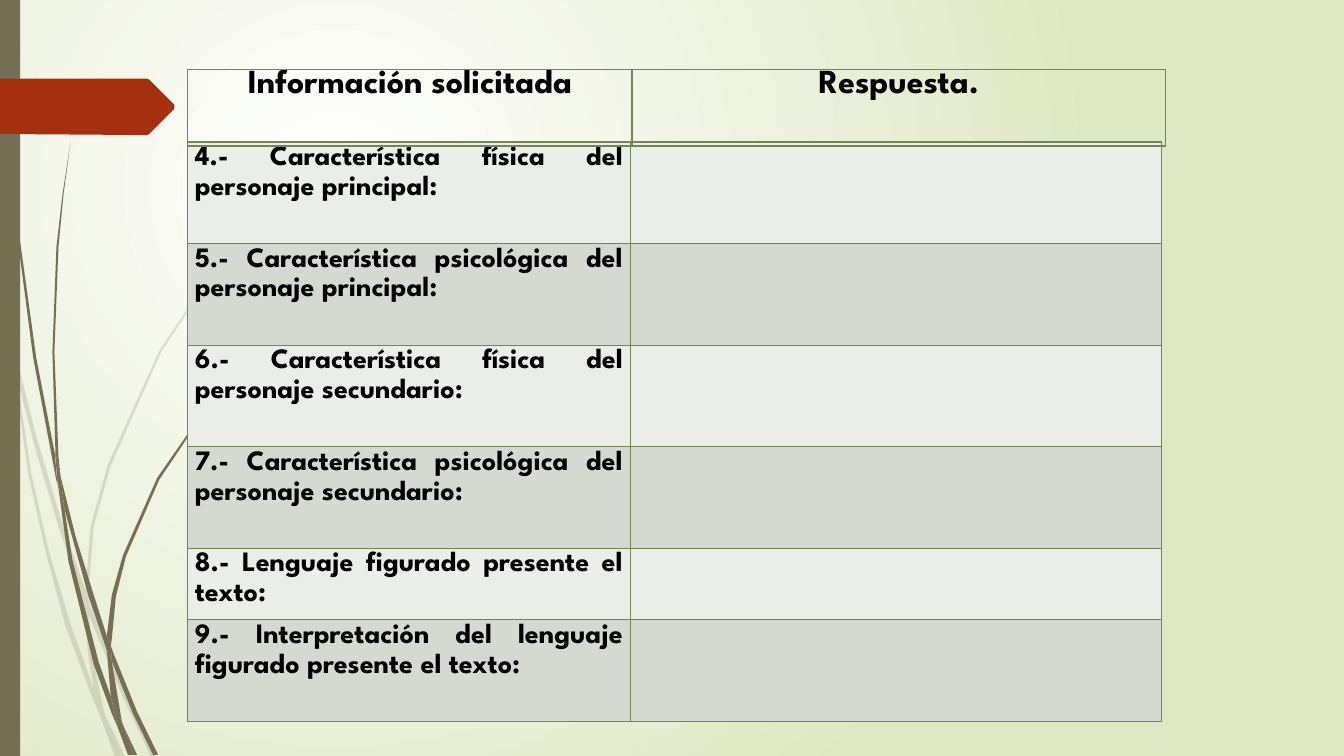
from dataclasses import dataclass

from lxml import etree
from pptx import Presentation
from pptx.dml.color import RGBColor
from pptx.enum.shapes import MSO_SHAPE
from pptx.enum.text import PP_ALIGN
from pptx.oxml.ns import qn
from pptx.util import Cm, Pt

RECT = MSO_SHAPE.RECTANGLE
CENTER, JUSTIFY = PP_ALIGN.CENTER, PP_ALIGN.JUSTIFY


@dataclass(frozen=True)
class Theme:
    font: str = "League Spartan"
    header_size: int = 24
    body_size: int = 20
    text: str = "000000"
    border: str = "728653"
    stem: str = "766F54"
    arrow: str = "A53010"
    bands: tuple = ("EBEDE9", "D5D9D1")
    glow: tuple = ("FFFFFF", "DFE8C4")


T = Theme()

# Outlines as (x, y) corners, in hundredths of an inch
UNIT = Cm(2.54) / 100
FAINT_STEMS = [
    [(11, 350), (9, 322), (0, 282), (0, 299), (10, 344)],
    [(58, 522), (84, 599), (85, 586), (62, 520), (36, 433), (14, 345), (17, 376), (36, 449)],
    [(92, 607), (88, 596), (88, 610), (123, 694), (150, 751), (155, 751), (127, 692)],
    [(119, 751), (124, 751), (105, 711)],
    [(93, 683), (70, 619), (48, 545), (31, 469), (17, 376), (11, 350), (28, 470),
     (45, 546), (65, 621), (92, 693), (101, 714), (99, 707)],
    [(84, 599), (87, 646), (93, 683), (96, 692), (105, 711), (103, 706), (91, 646),
     (88, 610), (88, 608)],
    [(88, 584), (93, 522), (110, 462), (160, 349), (229, 245), (268, 198), (290, 175),
     (312, 154), (312, 153), (289, 175), (268, 197), (228, 244), (158, 348), (107, 461),
     (90, 522), (85, 584), (85, 586), (88, 596)],
    [(101, 714), (114, 751), (119, 751)],
    [(88, 608), (88, 610), (88, 596), (85, 586), (84, 599)],
    [(96, 692), (93, 683), (99, 707), (101, 714), (119, 751), (105, 711)],
]
DARK_STEMS = [
    [(7, 110), (17, 233), (33, 355), (56, 477), (57, 481), (55, 457), (55, 453), (36, 355),
     (19, 232), (8, 109), (5, 48), (4, 0), (3, 0), (4, 48)],
    [(88, 592), (106, 645), (106, 633), (106, 631), (93, 590), (75, 532), (60, 472), (64, 505)],
    [(113, 649), (110, 641), (111, 656), (132, 708), (152, 749), (157, 749), (136, 706)],
    [(110, 691), (98, 657), (72, 556), (64, 505), (57, 477), (68, 557), (93, 659),
     (111, 708), (117, 722), (116, 717)],
    [(60, 472), (58, 453), (54, 349), (58, 245), (63, 193), (70, 141), (62, 193),
     (56, 245), (52, 349), (55, 449)],
    [(133, 749), (136, 749), (122, 719)],
    [(57, 477), (64, 505), (60, 472), (55, 449), (55, 453)],
    [(111, 633), (115, 592), (125, 552), (158, 476), (205, 406), (231, 374), (245, 359),
     (261, 344), (260, 344), (245, 358), (231, 373), (204, 405), (156, 474), (122, 551),
     (111, 590), (106, 631), (110, 641)],
    [(117, 722), (127, 749), (131, 749)],
    [(106, 645), (110, 691), (116, 706), (122, 719), (121, 716), (111, 656), (109, 651)],
    [(106, 645), (109, 651), (111, 656), (110, 641), (106, 631), (106, 633)],
    [(116, 706), (110, 691), (116, 717), (117, 722), (130, 749), (133, 749), (122, 719)],
]
ARROW = [(173, 108), (148, 133), (146, 134), (136, 134), (0, 133), (0, 78), (136, 78),
         (146, 78), (148, 79), (173, 104)]
QUESTIONS = [
    "4.- Característica física del personaje principal:",
    "5.- Característica psicológica del personaje principal:",
    "6.- Característica física del personaje secundario:",
    "7.- Característica psicológica del personaje secundario:",
    "8.- Lenguaje figurado presente el texto:",
    "9.- Interpretación del lenguaje figurado presente el texto:",
]


def paint(sp, color, alpha=100):
    """Fill a shape with one colour, without line or shadow."""
    sp.shadow.inherit = False
    sp.line.fill.background()
    sp.fill.solid()
    sp.fill.fore_color.rgb = RGBColor.from_string(color)
    if alpha < 100:
        clr = sp._element.spPr.find(".//" + qn("a:srgbClr"))
        etree.SubElement(clr, qn("a:alpha"), val=str(alpha * 1000))


def fill_cell(cell, text, align, size, bottom, band=None):
    """Give a cell its margins, borders, fill and text."""
    cell.margin_left = cell.margin_right = Cm(0.18)
    cell.margin_top = cell.margin_bottom = 0
    tcPr = cell._tc.get_or_add_tcPr()
    for side, width in (("L", 1), ("R", 1), ("T", 1), ("B", bottom)):
        ln = etree.SubElement(tcPr, qn(f"a:ln{side}"), w=str(Pt(width)))
        solid = etree.SubElement(ln, qn("a:solidFill"))
        etree.SubElement(solid, qn("a:srgbClr"), val=T.border)
    if band:
        cell.fill.solid()
        cell.fill.fore_color.rgb = RGBColor.from_string(band)
    else:
        cell.fill.background()
    p = cell.text_frame.paragraphs[0]
    p.text = text
    p.alignment = align
    p.space_after = Pt(6)
    for r in p.runs:
        r.font.name, r.font.size, r.font.bold = T.font, Pt(size), True
        r.font.color.rgb = RGBColor.from_string(T.text)
    return p


prs = Presentation()
prs.slide_width, prs.slide_height = Cm(33.87), Cm(19.05)
s = prs.slides.add_slide(prs.slide_layouts[6])

# Background glow
bg = s.background.fill
bg.gradient()
for stop, color in zip(bg.gradient_stops, T.glow):
    stop.color.rgb = RGBColor.from_string(color)
grad = s._element.find(".//" + qn("a:gradFill"))
grad.remove(grad.find(qn("a:lin")))
glow = etree.SubElement(grad, qn("a:path"), path="circle")
etree.SubElement(glow, qn("a:fillToRect"), l="50000", t="50000", r="100000", b="100000")

# Side bar, stems and arrow
bar = s.shapes.add_shape(RECT, 0, 0, Cm(0.51), prs.slide_height)
paint(bar, T.stem)
for outlines, color, alpha in ((FAINT_STEMS, T.stem, 20), (DARK_STEMS, T.stem, 100),
                               ([ARROW], T.arrow, 100)):
    for outline in outlines:
        fb = s.shapes.build_freeform(*outline[0], scale=UNIT)
        fb.add_line_segments(outline[1:], close=True)
        paint(fb.convert_to_shape(), color, alpha)

# Tables
tables = []
for rows, top, widths, heights in (
        (len(QUESTIONS), 3.58, (11.15, 13.39), [2.56] * 4 + [1.8, 2.56]),
        (1, 1.76, (11.2, 13.44), [1.92])):
    table = s.shapes.add_table(rows, 2, Cm(4.73), Cm(top),
                               Cm(sum(widths)), Cm(sum(heights))).table
    table.first_row = table.horz_banding = False
    for col, width in zip(table.columns, widths):
        col.width = Cm(width)
    for row, height in zip(table.rows, heights):
        row.height = Cm(height)
    tables.append(table)

questions, header = tables
for i, question in enumerate(QUESTIONS):
    for j, text in enumerate((question, "")):
        p = fill_cell(questions.cell(i, j), text, JUSTIFY, T.body_size, 1, T.bands[i % 2])
        p.space_before, p.line_spacing = Pt(6), 1.15
for j, text in enumerate(("Información solicitada", "Respuesta.")):
    p = fill_cell(header.cell(0, j), text, CENTER, T.header_size, 2)
    p.space_before = Pt(12)

prs.save("out.pptx")
